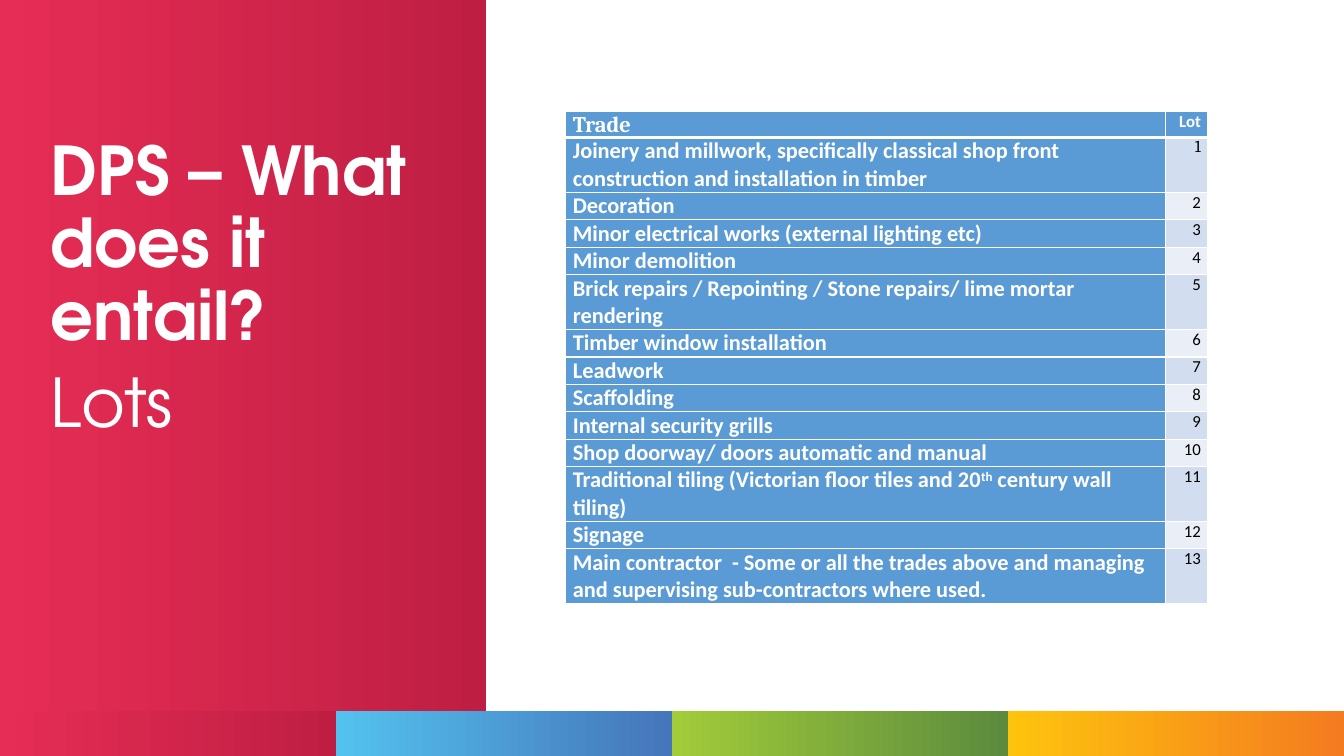
from pptx import Presentation
from pptx.dml.color import RGBColor as RGB
from pptx.enum.shapes import MSO_SHAPE as Shape
from pptx.enum.text import MSO_ANCHOR as Anchor, MSO_AUTO_SIZE as AutoSize, PP_ALIGN as Align
from pptx.oxml.ns import qn
from pptx.util import Inches, Pt
from lxml.etree import SubElement

W, H = Inches(13.333), Inches(7.5)
BAR_TOP = 0.94
C = {
    "white": "FFFFFF", "black": "000000", "cell": "5B9BD5",
    "odd": "D2DEEF", "even": "EAEFF7",
    "red": "E62D55", "dark red": "BF1E43",
    "sky": "53C2EF", "blue": "4575BA",
    "lime": "A2CC3A", "green": "5C8B3D",
    "yellow": "FEC40D", "orange": "F47B20",
}
BARS = [("dark red", "red"), ("blue", "sky"), ("green", "lime"), ("orange", "yellow")]
TITLE = {"name": "TeX Gyre Adventor", "size": Pt(48), "bold": True}
TRADE = {"name": "Calibri", "size": Pt(16), "bold": True}
LOT = {"name": "Calibri", "size": Pt(12), "bold": False}
TRADES = [
    ("Joinery and millwork, specifically classical shop front construction "
     "and installation in timber", 2),
    ("Decoration", 1),
    ("Minor electrical works (external lighting etc)", 1),
    ("Minor demolition", 1),
    ("Brick repairs / Repointing / Stone repairs/ lime mortar rendering", 2),
    ("Timber window installation", 1),
    ("Leadwork", 1),
    ("Scaffolding", 1),
    ("Internal security grills", 1),
    ("Shop doorway/ doors automatic and manual", 1),
    ("Traditional tiling (Victorian floor tiles and 20^th^ century wall tiling)", 2),
    ("Signage", 1),
    ("Main contractor  - Some or all the trades above and managing and "
     "supervising sub-contractors where used.", 2),
]


def color(name):
    return RGB.from_string(C[name])


def add_run(p, text, fmt, ink):
    r = p.add_run()
    r.text = text
    for key, value in fmt.items():
        setattr(r.font, key, value)
    r.font.color.rgb = color(ink)
    return r


def add_gradient(s, x, y, w, h, stops, angle):
    sp = s.shapes.add_shape(Shape.RECTANGLE, int(W * x), int(H * y), int(W * w), int(H * h))
    sp.shadow.inherit = False
    sp.line.fill.background()
    sp.fill.gradient()
    sp.fill.gradient_angle = angle
    for stop, name in zip(sp.fill.gradient_stops, stops):
        stop.color.rgb = color(name)


def add_title(s, lines):
    sp = s.shapes.title
    sp._element.getparent().append(sp._element)
    sp.left, sp.top, sp.width, sp.height = (
        int(W * 0.03), int(H * 0.175), int(W * 0.32), int(H * 0.74))
    tf = sp.text_frame
    for key, value in {"word_wrap": True, "auto_size": AutoSize.NONE,
                       "vertical_anchor": Anchor.TOP}.items():
        setattr(tf, key, value)
    for i, (text, bold) in enumerate(lines):
        p = tf.add_paragraph() if i else tf.paragraphs[0]
        p.alignment, p.line_spacing = Align.LEFT, 0.9
        p.space_before = Pt(10 if i else 0)
        add_run(p, text, {**TITLE, "bold": bold}, "white")


def add_borders(cell, bottom):
    tc_pr = cell._tc.get_or_add_tcPr()
    for i, (side, width) in enumerate({"L": 1, "R": 1, "T": 1, "B": bottom}.items()):
        ln = SubElement(tc_pr, qn(f"a:ln{side}"), w=str(Pt(width)))
        fill = SubElement(ln, qn("a:solidFill"))
        SubElement(fill, qn("a:srgbClr"), val=C["white"])
        tc_pr.insert(i, ln)


def fill_cell(cell, text, fmt, ink, back, align=Align.LEFT, bottom=1):
    for key, value in {"margin_left": Inches(0.07), "margin_right": Inches(0.07),
                       "margin_top": 0, "margin_bottom": 0}.items():
        setattr(cell, key, value)
    cell.fill.solid()
    cell.fill.fore_color.rgb = color(back)
    add_borders(cell, bottom)
    p = cell.text_frame.paragraphs[0]
    p.alignment = align
    for i, part in enumerate(text.split("^")):
        r = add_run(p, part, fmt, ink)
        if i % 2:
            r._r.get_or_add_rPr().set("baseline", "30000")


def add_trades(s):
    line = Inches(0.27)
    heights = [Inches(0.25)] + [line * n for _, n in TRADES]
    table = s.shapes.add_table(len(heights), 2, int(W * 0.421), int(H * 0.148),
                               Inches(6.37), sum(heights)).table
    for col, width in zip(table.columns, (5.95, 0.42)):
        col.width = Inches(width)
    for row, height in zip(table.rows, heights):
        row.height = height
    fill_cell(table.cell(0, 0), "Trade", {**TRADE, "name": "Cambria"}, "white", "cell", bottom=3)
    fill_cell(table.cell(0, 1), "Lot", {**LOT, "bold": True}, "white", "cell", Align.RIGHT, 3)
    for n, (trade, _) in enumerate(TRADES, 1):
        fmt = {**LOT, "name": "Cambria"} if n == 1 else LOT
        fill_cell(table.cell(n, 0), trade, TRADE, "white", "cell")
        fill_cell(table.cell(n, 1), str(n), fmt, "black", "odd" if n % 2 else "even", Align.RIGHT)


def main():
    prs = Presentation()
    prs.slide_width, prs.slide_height = W, H
    s = prs.slides.add_slide(prs.slide_layouts[5])
    add_gradient(s, 0, 0, 0.3615, BAR_TOP, ("red", "dark red"), 0)
    for i, stops in enumerate(BARS):
        add_gradient(s, i / len(BARS), BAR_TOP, 1 / len(BARS), 1 - BAR_TOP, stops, 180)
    add_title(s, [("DPS – What does it entail?", True), ("Lots", False)])
    add_trades(s)
    prs.save("out.pptx")


if __name__ == "__main__":
    main()
